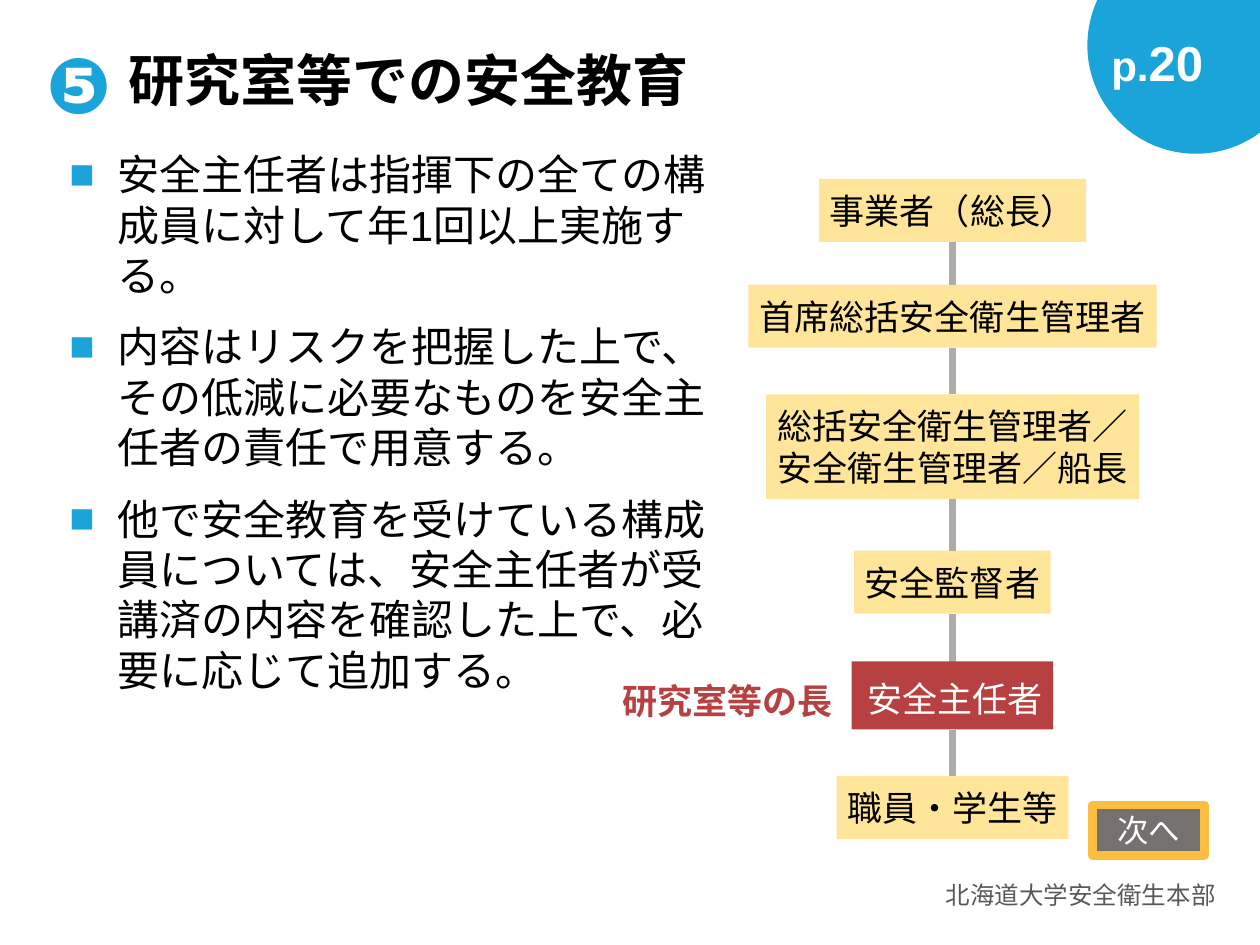
from dataclasses import dataclass
from itertools import pairwise

from lxml.etree import SubElement
from pptx import Presentation
from pptx.dml.color import RGBColor as Rgb
from pptx.enum.shapes import MSO_CONNECTOR as Conn, MSO_SHAPE as Kind
from pptx.enum.text import MSO_ANCHOR as Anchor, MSO_AUTO_SIZE as Fit, PP_ALIGN as Align
from pptx.oxml.ns import qn
from pptx.util import Inches, Pt


@dataclass(frozen=True)
class Theme:
    font: str = "Arial"
    blue: str = "1AA4D9"
    gold: str = "FFC000"
    rim: str = "FCBE40"
    red: str = "B74140"
    gray: str = "767171"
    rail: str = "AFABAB"
    note: str = "595959"
    black: str = "000000"
    white: str = "FFFFFF"
    mark: int = 44
    title: int = 32
    page: int = 28
    body: int = 24
    label: int = 20
    button: int = 18
    foot: int = 14


T = Theme()
AXIS = 7.56

TITLE = "研究室等での安全教育"
POINTS = [
    "安全主任者は指揮下の全ての構成員に対して年1回以上実施する。",
    "内容はリスクを把握した上で、その低減に必要なものを安全主任者の責任で用意する。",
    "他で安全教育を受けている構成員については、安全主任者が受講済の内容を確認した上で、"
    "必要に応じて追加する。",
]
# Each rank: lines, top, width, height, fill, opacity, text colour
PALE = (T.gold, 40, T.black)
RANKS = [
    (["事業者（総長）"], 1.42, 2.12, 0.5, *PALE),
    (["首席総括安全衛生管理者"], 2.26, 3.24, 0.5, *PALE),
    (["総括安全衛生管理者／", "安全衛生管理者／船長"], 3.13, 2.96, 0.83, *PALE),
    (["安全監督者"], 4.37, 1.56, 0.5, *PALE),
    (["安全主任者"], 5.25, 1.6, 0.54, T.red, 100, T.white),
    (["職員・学生等"], 6.16, 1.84, 0.5, *PALE),
]


def add_bullet(para, indent=0.38):
    props = para._p.get_or_add_pPr()
    props.set("marL", str(Inches(indent)))
    props.set("indent", str(-Inches(indent)))
    color = SubElement(props, qn("a:buClr"))
    SubElement(color, qn("a:srgbClr"), val=T.blue)
    SubElement(props, qn("a:buFont"), typeface=T.font)
    SubElement(props, qn("a:buChar"), char="■")


def put_text(shape, paras, size=T.label, color=T.black, bold=False, align=Align.LEFT,
             anchor=Anchor.TOP, inset=(0.1, 0.05, 0.1, 0.05), wrap=True, fit=Fit.NONE,
             lead=None, gap=0, bullet=False):
    """Write paragraphs; each is a string or a list of (text, size) runs."""
    frame = shape.text_frame
    frame.word_wrap, frame.auto_size, frame.vertical_anchor = wrap, fit, anchor
    (frame.margin_left, frame.margin_top,
     frame.margin_right, frame.margin_bottom) = map(Inches, inset)
    for i, runs in enumerate(paras):
        para = frame.add_paragraph() if i else frame.paragraphs[0]
        para.alignment = align
        if lead:
            para.line_spacing = lead
        if i and gap:
            para.space_before = Pt(gap)
        if bullet:
            add_bullet(para)
        for text, pts in [(runs, size)] if isinstance(runs, str) else runs:
            run = para.add_run()
            run.text = text
            font = run.font
            font.name, font.size, font.bold = T.font, Pt(pts), bold
            font.color.rgb = Rgb.from_string(color)


def add_text(slide, box, paras, **style):
    put_text(slide.shapes.add_textbox(*map(Inches, box)), paras, **style)


def add_box(slide, box, fill, kind=Kind.RECTANGLE, alpha=100, rim=None, width=0):
    shape = slide.shapes.add_shape(kind, *map(Inches, box))
    shape.shadow.inherit = False
    shape.fill.solid()
    shape.fill.fore_color.rgb = Rgb.from_string(fill)
    if alpha < 100:
        color = shape._element.spPr.find(qn("a:solidFill"))[0]
        SubElement(color, qn("a:alpha"), val=str(alpha * 1000))
    if rim:
        shape.line.color.rgb = Rgb.from_string(rim)
        shape.line.width = Pt(width)
        SubElement(shape.line._get_or_add_ln(), qn("a:round"))
    else:
        shape.line.fill.background()
    return shape


def add_link(slide, top, end):
    link = slide.shapes.add_connector(
        Conn.STRAIGHT, *map(Inches, (AXIS, top, AXIS, end)))
    link.line.color.rgb = Rgb.from_string(T.rail)
    link.line.width = Pt(4.5)
    SubElement(link._element.spPr, qn("a:effectLst"))


def add_chain(slide):
    for upper, lower in pairwise(RANKS):
        add_link(slide, upper[1] + upper[3], lower[1])
    for lines, top, width, height, fill, alpha, color in RANKS:
        box = add_box(slide, (AXIS - width / 2, top, width, height), fill, alpha=alpha)
        inset = (0.12, 0.12, 0.08, 0.08) if fill == T.red else (0.08,) * 4
        put_text(box, lines, color=color, align=Align.CENTER, anchor=Anchor.MIDDLE,
                 inset=inset, wrap=False)


def main():
    deck = Presentation()
    deck.slide_width, deck.slide_height = Inches(10), Inches(7.5)
    slide = deck.slides.add_slide(deck.slide_layouts[6])

    # Page disc and footer
    add_box(slide, (8.63, -0.5, 1.72, 1.72), T.blue, kind=Kind.OVAL)
    foot = add_box(slide, (6.27, 6.97, 3.46, 0.2), T.white, alpha=70)
    put_text(foot, ["北海道大学安全衛生本部"], size=T.foot, color=T.note,
             align=Align.RIGHT, inset=(0.08, 0.04, 0.08, 0.04), lead=0.9)
    add_text(slide, (8.7, 0, 1.3, 0.95), [[("p.", T.body), ("20", T.page)]],
             color=T.white, bold=True, inset=(0.12, 0.31, 0.12, 0.2), lead=0.9)

    # Heading
    add_text(slide, (0.37, 0.3, 0.69, 0.8), ["❺"], size=T.mark, color=T.blue,
             bold=True, anchor=Anchor.MIDDLE, inset=(0, 0, 0, 0), lead=0.9)
    add_text(slide, (0.51, 0.39, 8.98, 0.54), [TITLE], size=T.title, bold=True,
             anchor=Anchor.MIDDLE, inset=(0.51, 0, 0, 0), lead=0.9)

    # Bulleted points
    add_text(slide, (0.51, 1.18, 5.42, 2.96), POINTS, size=T.body,
             inset=(0.04, 0, 0.16, 0), gap=12, bullet=True)

    # Chain of command
    add_chain(slide)
    add_text(slide, (4.83, 5.34, 1.88, 0.44), ["研究室等の長"], color=T.red, bold=True,
             align=Align.RIGHT, wrap=False, fit=Fit.SHAPE_TO_FIT_TEXT)

    # Next button
    button = add_box(slide, (8.67, 6.39, 0.89, 0.4), T.gray, rim=T.rim, width=5)
    put_text(button, ["次へ"], size=T.button, color=T.white, align=Align.CENTER)

    deck.save("out.pptx")


if __name__ == "__main__":
    main()
